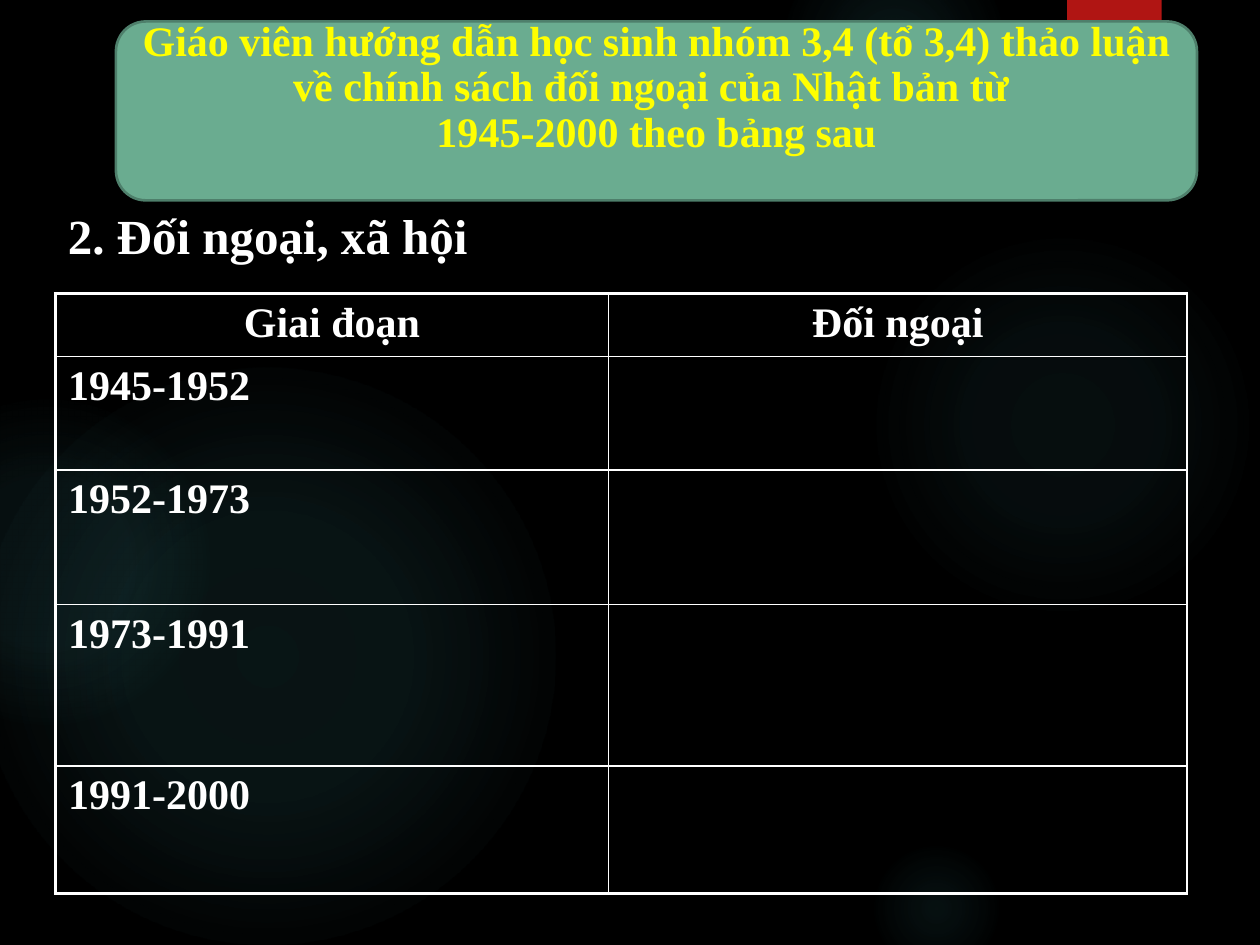
from lxml.etree import SubElement
from pptx import Presentation
from pptx.dml.color import RGBColor
from pptx.enum.shapes import MSO_SHAPE
from pptx.enum.text import MSO_ANCHOR, PP_ALIGN
from pptx.oxml import parse_xml
from pptx.oxml.ns import nsdecls, qn
from pptx.util import Inches, Pt

HUES = {"back": "000000", "glow": "50B9C1", "tab": "B01513", "panel": "6AAC90",
        "edge": "4E7F6B", "title": "FFFF00", "text": "FFFFFF"}


def hue(name):
    return RGBColor.from_string(HUES[name])


def write(frame, text, size=24, color="text", align=PP_ALIGN.LEFT, space=None):
    for i, line in enumerate(text.split("\n")):
        para = frame.add_paragraph() if i else frame.paragraphs[0]
        para.alignment = align
        para.line_spacing = space
        run = para.add_run()
        run.text = line
        run.font.name = "Times New Roman"
        run.font.size = Pt(size)
        run.font.bold = True
        run.font.color.rgb = hue(color)


deck = Presentation()
deck.slide_width, deck.slide_height = Inches(10), Inches(7.5)
slide = deck.slides.add_slide(deck.slide_layouts[6])
slide.background.fill.solid()
slide.background.fill.fore_color.rgb = hue("back")

glows = [
    (6.89, 1.83, 3.08, [(0, 7), (36, 6), (69, 0)]),
    (6.22, -0.5, 1.75, [(0, 14), (36, 7), (73, 0)]),
    (6.89, 6.67, 1.08, [(0, 9), (36, 5), (66, 0)]),
    (-0.17, 2.92, 4.58, [(0, 11), (36, 10), (75, 0)]),
    (-0.92, 3.17, 2.58, [(0, 8), (36, 8), (72, 0)]),
]
for left, top, size, stops in glows:
    glow = slide.shapes.add_shape(MSO_SHAPE.OVAL, Inches(left), Inches(top),
                                  Inches(size), Inches(size))
    glow.shadow.inherit = False
    glow.line.fill.background()
    marks = "".join(
        f'<a:gs pos="{pos * 1000}"><a:srgbClr val="{HUES["glow"]}">'
        f'<a:alpha val="{alpha * 1000}"/></a:srgbClr></a:gs>'
        for pos, alpha in stops)
    grad = parse_xml(
        f'<a:gradFill {nsdecls("a")} rotWithShape="1"><a:gsLst>{marks}</a:gsLst>'
        '<a:path path="circle"><a:fillToRect l="50000" t="50000" r="50000" b="50000"/>'
        '</a:path></a:gradFill>')
    glow.element.spPr.find(qn("a:prstGeom")).addnext(grad)

tab = slide.shapes.add_shape(MSO_SHAPE.RECTANGLE, Inches(8.47), Inches(0),
                             Inches(0.75), Inches(1.2))
tab.shadow.inherit = False
tab.fill.solid()
tab.fill.fore_color.rgb = hue("tab")
tab.line.fill.background()

rows = [("Giai đoạn", "Đối ngoại"), ("1945-1952", ""), ("1952-1973", ""),
        ("1973-1991", ""), ("1991-2000", "")]
widths = [4.39, 4.59]
heights = [0.5, 0.9, 1.07, 1.28, 1.01]
table = slide.shapes.add_table(len(rows), len(widths), Inches(0.44), Inches(2.33),
                               Inches(sum(widths)), Inches(sum(heights))).table
table.first_row = table.horz_banding = False
for col, width in zip(table.columns, widths):
    col.width = Inches(width)
for r, (row, height) in enumerate(zip(rows, heights)):
    table.rows[r].height = Inches(height)
    for c, text in enumerate(row):
        cell = table.cell(r, c)
        if text:
            write(cell.text_frame, text,
                  align=PP_ALIGN.LEFT if r else PP_ALIGN.CENTER)
        cell.fill.background()
        props = cell._tc.get_or_add_tcPr()
        thick = {"L": c == 0, "R": False, "T": r == 0, "B": r == len(rows) - 1}
        for i, (side, bold) in enumerate(thick.items()):
            edge = SubElement(props, qn("a:ln" + side), w=str(Pt(2.25 if bold else 1)))
            fill = SubElement(edge, qn("a:solidFill"))
            SubElement(fill, qn("a:srgbClr"), val=HUES["text"])
            props.insert(i, edge)

panel = slide.shapes.add_shape(MSO_SHAPE.FLOWCHART_ALTERNATE_PROCESS, Inches(0.92),
                               Inches(0.17), Inches(8.58), Inches(1.42))
panel.shadow.inherit = False
panel.fill.solid()
panel.fill.fore_color.rgb = hue("panel")
panel.line.color.rgb = hue("edge")
panel.line.width = Pt(1.5)
frame = panel.text_frame
frame.word_wrap = False
frame.vertical_anchor = MSO_ANCHOR.MIDDLE
frame.margin_bottom = Inches(0.41)
write(frame, "Giáo viên hướng dẫn học sinh nhóm 3,4 (tổ 3,4) thảo luận\n"
      "về chính sách đối ngoại của Nhật bản từ \n"
      "1945-2000 theo bảng sau",
      color="title", align=PP_ALIGN.CENTER, space=0.9)

head = slide.shapes.add_textbox(Inches(0.44), Inches(1.58), Inches(4.5), Inches(0.57))
head.text_frame.word_wrap = True
write(head.text_frame, "2. Đối ngoại, xã hội", size=28)

deck.save("out.pptx")
